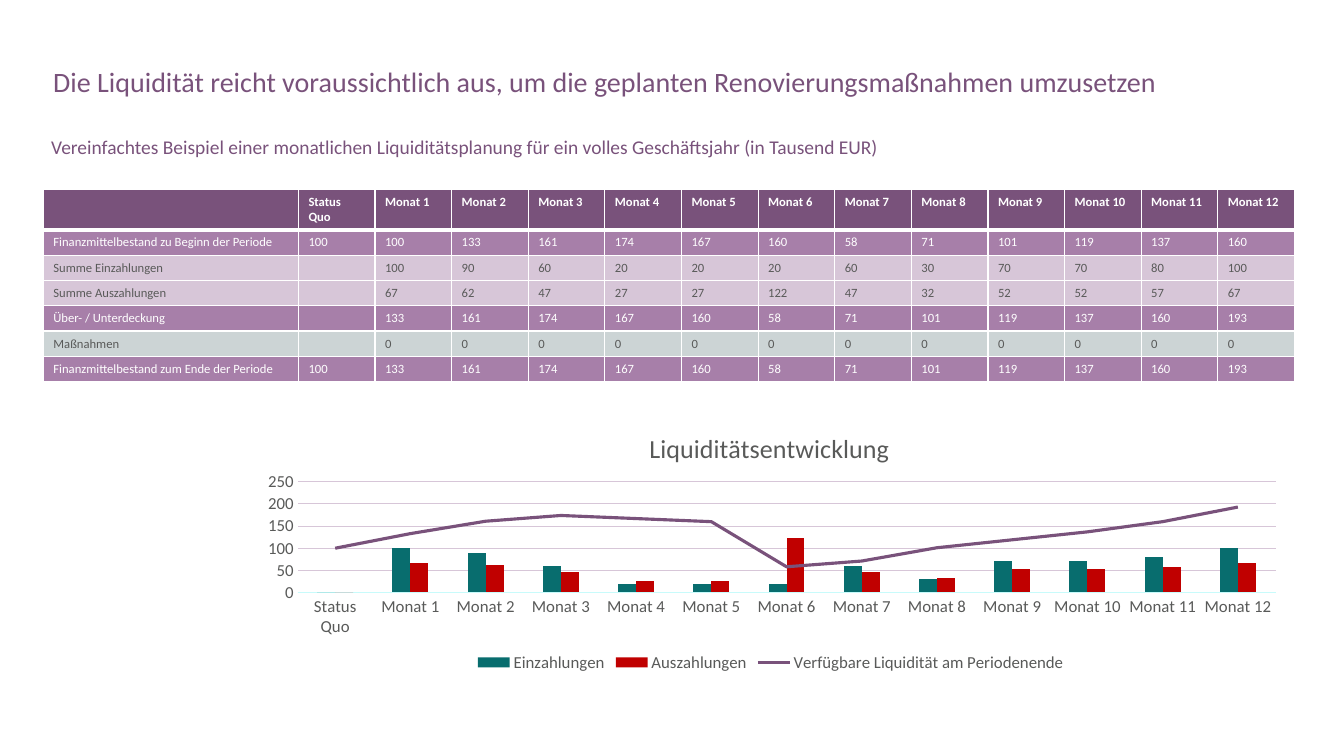
from pptx import Presentation
from pptx.chart.data import CategoryChartData
from pptx.dml.color import RGBColor
from pptx.enum.chart import (XL_CHART_TYPE, XL_LEGEND_POSITION, XL_MARKER_STYLE,
                             XL_TICK_MARK)
from pptx.oxml import parse_xml
from pptx.oxml.ns import nsdecls, qn
from pptx.util import Inches, Pt

FONT = "Calibri"
PLUM, MAUVE, LILAC, MIST = "79527B", "A77FA9", "D7C6D8", "CCD4D5"
GREY, WHITE, TEAL, RED, AQUA = "595A59", "FFFFFF", "086D6E", "C00000", "C8FBFB"

# Monthly plan in thousand EUR, opening status first
HEADS = ["Status Quo"] + [f"Monat {n}" for n in range(1, 13)]
INFLOW = [100, 90, 60, 20, 20, 20, 60, 30, 70, 70, 80, 100]
OUTFLOW = [67, 62, 47, 27, 27, 122, 47, 32, 52, 52, 57, 67]
FUNDS = [100, 133, 161, 174, 167, 160, 58, 71, 101, 119, 137, 160, 193]

# Label, values, fill, text colour
ROWS = [
    ("", HEADS, PLUM, WHITE),
    ("Finanzmittelbestand zu Beginn der Periode", FUNDS[:1] + FUNDS[:-1], MAUVE, WHITE),
    ("Summe Einzahlungen", [""] + INFLOW, LILAC, GREY),
    ("Summe Auszahlungen", [""] + OUTFLOW, LILAC, GREY),
    ("Über- / Unterdeckung", [""] + FUNDS[1:], MAUVE, WHITE),
    ("Maßnahmen", [""] + [0] * 12, MIST, GREY),
    ("Finanzmittelbestand zum Ende der Periode", FUNDS, MAUVE, WHITE),
]


def rgb(code):
    return RGBColor.from_string(code)


def style(font, size, color, bold=False):
    font.name, font.size, font.bold = FONT, Pt(size), bold
    font.color.rgb = rgb(color)


def box(left, top, width, height):
    return [Inches(n) for n in (left, top, width, height)]


def add_line(slide, text, place, size, space):
    frame = slide.shapes.add_textbox(*box(*place)).text_frame
    frame.word_wrap = True
    para = frame.paragraphs[0]
    para.text = text
    para.line_spacing = space
    style(para.font, size, PLUM)


def edge(cell, side, width):
    cell._tc.get_or_add_tcPr().append(parse_xml(
        f'<a:ln{side} {nsdecls("a")} w="{Pt(width)}"><a:solidFill>'
        f'<a:srgbClr val="{WHITE}"/></a:solidFill></a:ln{side}>'))


def fill_cell(cell, value, row, fill, color):
    para = cell.text_frame.paragraphs[0]
    if value == "":
        para._p.get_or_add_endParaRPr().set("sz", "900")
    else:
        para.text = str(value)
    style(para.font, 9, color, row == 0)
    # A thick rule divides the header from the body
    for side in "LRTB":
        thick = (row, side) in ((0, "B"), (1, "T"))
        edge(cell, side, 3 if thick else 1)
    cell.fill.solid()
    cell.fill.fore_color.rgb = rgb(fill)


def add_plan(slide):
    table = slide.shapes.add_table(
        len(ROWS), len(HEADS) + 1, *box(0.43, 1.88, 12.43, 1.9)).table
    for n, col in enumerate(table.columns):
        col.width = Inches(0.76 if n else 2.53)
    for n, (label, values, fill, color) in enumerate(ROWS):
        table.rows[n].height = Inches(0.23 if n else 0.36)
        for cell, value in zip(table.rows[n].cells, [label] + values):
            fill_cell(cell, value, n, fill, color)


def set_layout(node, index, inner=False, **shares):
    for old in node.findall(qn("c:layout")):
        node.remove(old)
    target = '<c:layoutTarget val="inner"/>' if inner else ""
    modes = '<c:xMode val="edge"/><c:yMode val="edge"/>'
    sizes = "".join(f'<c:{k} val="{v}"/>' for k, v in shares.items())
    node.insert(index, parse_xml(
        f'<c:layout {nsdecls("c")}><c:manualLayout>{target}{modes}{sizes}'
        '</c:manualLayout></c:layout>'))


def split_line(chart):
    """Turn the last column series into a line on the same axes."""
    bars = chart.plots[0]._element
    ser = bars.findall(qn("c:ser"))[-1]
    for flag in ser.findall(qn("c:invertIfNegative")):
        ser.remove(flag)
    axes = "".join(f'<c:axId val="{a.get("val")}"/>' for a in bars.findall(qn("c:axId")))
    lines = parse_xml(
        f'<c:lineChart {nsdecls("c")}><c:grouping val="standard"/>'
        f'<c:varyColors val="0"/><c:marker val="1"/>{axes}</c:lineChart>')
    lines.insert(2, ser)
    bars.addnext(lines)
    curve = chart.plots[1].series[0]
    curve.smooth = False
    curve.marker.style = XL_MARKER_STYLE.NONE
    curve.format.line.width = Pt(2.25)
    curve.format.line.color.rgb = rgb(PLUM)


def style_axes(chart):
    cat, val = chart.category_axis, chart.value_axis
    for axis in (cat, val):
        axis.major_tick_mark = axis.minor_tick_mark = XL_TICK_MARK.NONE
        style(axis.tick_labels.font, 12, GREY)
    val.minimum_scale, val.maximum_scale, val.major_unit = 0, 250, 50
    val.format.line.fill.background()
    for line, color in ((cat.format.line, AQUA), (val.major_gridlines.format.line, LILAC)):
        line.width = Pt(0.75)
        line.color.rgb = rgb(color)


def add_graph(slide):
    data = CategoryChartData()
    data.categories = HEADS
    data.add_series("Einzahlungen", [0] + INFLOW)
    data.add_series("Auszahlungen", [0] + OUTFLOW)
    data.add_series("Verfügbare Liquidität am Periodenende", FUNDS)
    chart = slide.shapes.add_chart(
        XL_CHART_TYPE.COLUMN_CLUSTERED, *box(2.43, 4.03, 10.43, 2.68), data).chart
    style(chart.font, 10, GREY)

    # Columns and line
    plot = chart.plots[0]
    plot.gap_width, plot.overlap, plot.vary_by_categories = 219, 0, False
    split_line(chart)
    for ser, color in zip(plot.series, (TEAL, RED)):
        ser.format.fill.solid()
        ser.format.fill.fore_color.rgb = rgb(color)
    style_axes(chart)

    # Title and legend
    title = chart.chart_title
    para = title.text_frame.paragraphs[0]
    para.text = "Liquiditätsentwicklung"
    style(para.font, 18.6, GREY)
    title.include_in_layout = False
    chart.has_legend = True
    chart.legend.position = XL_LEGEND_POSITION.BOTTOM
    chart.legend.include_in_layout = False
    style(chart.legend.font, 12, GREY)

    set_layout(title._element, 1, x=0.38, y=0.07)
    set_layout(chart._chartSpace.chart.plotArea, 0, True, x=0.05, y=0.28, w=0.93, h=0.41)


def main():
    deck = Presentation()
    deck.slide_width, deck.slide_height = Inches(13.33), Inches(7.5)
    slide = deck.slides.add_slide(deck.slide_layouts[6])
    add_line(slide, "Die Liquidität reicht voraussichtlich aus, um die geplanten "
             "Renovierungsmaßnahmen umzusetzen", (0.43, 0.63, 12.54, 0.64), 20, 0.9)
    add_line(slide, "Vereinfachtes Beispiel einer monatlichen Liquiditätsplanung für "
             "ein volles Geschäftsjahr (in Tausend EUR)", (0.41, 1.35, 12.56, 0.28), 13.9, 0.7)
    add_plan(slide)
    add_graph(slide)
    deck.save("out.pptx")


if __name__ == "__main__":
    main()
